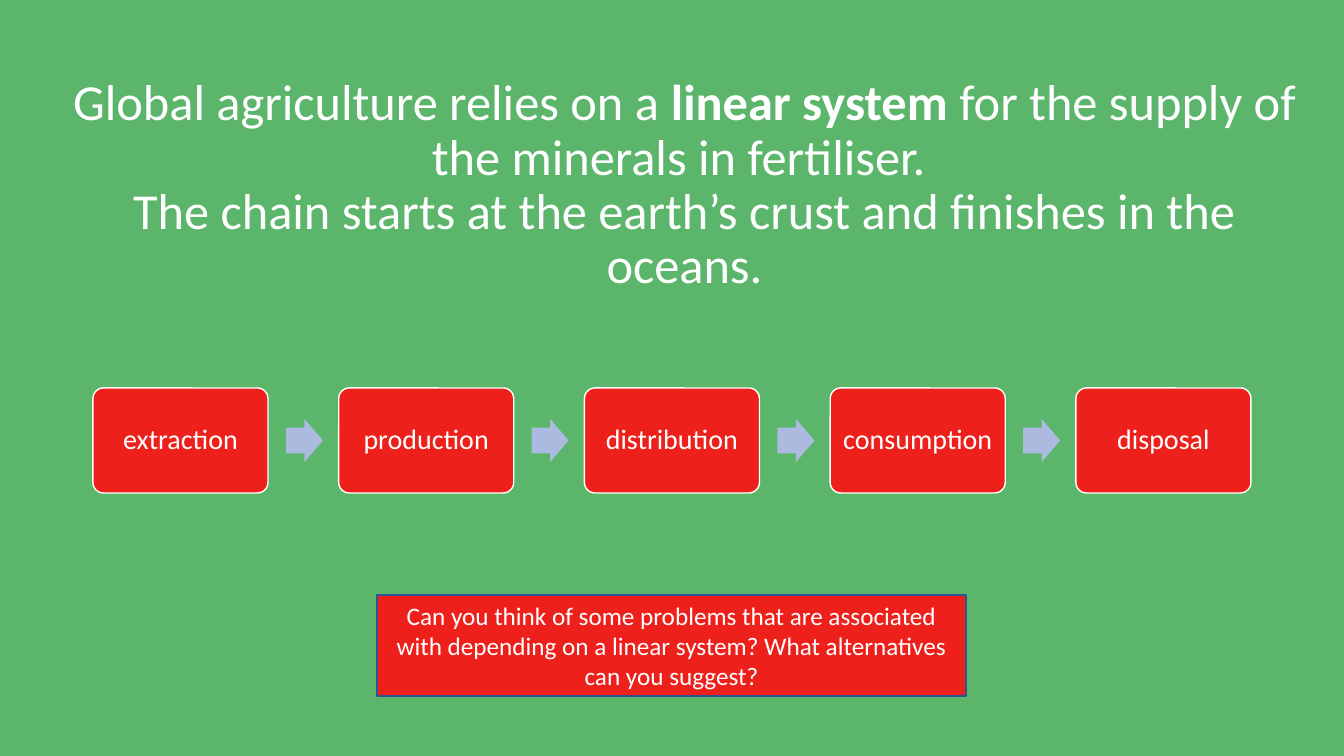
"""Build a slide on the linear supply chain of fertiliser minerals."""
from pptx import Presentation
from pptx import util as u
from pptx.dml import color
from pptx.enum import shapes, text

SCALE = 914400 / 100.8
WHITE, RED, GREEN, PALE_BLUE, NAVY = "FFFFFF", "ED201B", "5BB56A", "ABBADE", "31538F"


def px(*lengths):
    return [u.Emu(round(length * SCALE)) for length in lengths]


def add_run(paragraph, wording, size, bold=False):
    run = paragraph.add_run()
    run.text = wording
    run.font.name = "Calibri"
    run.font.size = u.Pt(size)
    run.font.bold = bold
    run.font.color.rgb = color.RGBColor.from_string(WHITE)


presentation = Presentation()
presentation.slide_width, presentation.slide_height = px(1344, 756)
slide = presentation.slides.add_slide(presentation.slide_layouts[6])
slide.background.fill.solid()
slide.background.fill.fore_color.rgb = color.RGBColor.from_string(GREEN)

title = slide.shapes.add_textbox(*px(50, 113, 1269, 146))
title.text_frame.word_wrap = True
title.text_frame.vertical_anchor = text.MSO_ANCHOR.MIDDLE
paragraph = title.text_frame.paragraphs[0]
paragraph.alignment = text.PP_ALIGN.CENTER
paragraph.line_spacing = 0.9
add_run(paragraph, "Global agriculture relies on a ", 36)
add_run(paragraph, "linear system", 36, bold=True)
add_run(paragraph, " for the supply of the minerals in fertiliser. ", 36)
paragraph.add_line_break()
add_run(paragraph, "The chain starts at the earth’s crust and finishes in the oceans.", 36)

stages = ["extraction", "production", "distribution", "consumption", "disposal"]
chain_left, chain_right, stage_width = 93, 1251, 175
pitch = (chain_right - chain_left - stage_width) / (len(stages) - 1)
SHAPE = shapes.MSO_SHAPE
parts = []
for index, stage in enumerate(stages):
    left = chain_left + index * pitch
    parts.append((SHAPE.ROUNDED_RECTANGLE, (left, 388, stage_width, 105), [0.1], RED, WHITE, stage, 20, 0.9))
    if index < len(stages) - 1:
        parts.append((SHAPE.RIGHT_ARROW, (left + 193, 419, 37, 43), [0.6, 0.5], PALE_BLUE, None, None, 0, 1))
question = (
    "Can you think of some problems that are associated with depending on a linear system? "
    "What alternatives can you suggest?"
)
parts.append((SHAPE.RECTANGLE, (377, 595, 589, 101), [], RED, NAVY, question, 18, 1))

for preset, box, adjustments, fill, line, wording, size, spacing in parts:
    shape = slide.shapes.add_shape(preset, *px(*box))
    shape.shadow.inherit = False
    for position, adjustment in enumerate(adjustments):
        shape.adjustments[position] = adjustment
    shape.fill.solid()
    shape.fill.fore_color.rgb = color.RGBColor.from_string(fill)
    if line:
        shape.line.color.rgb = color.RGBColor.from_string(line)
        shape.line.width = u.Pt(1)
    else:
        shape.line.fill.background()
    if wording:
        frame = shape.text_frame
        frame.word_wrap = True
        frame.vertical_anchor = text.MSO_ANCHOR.MIDDLE
        if preset == SHAPE.ROUNDED_RECTANGLE:
            frame.margin_left, frame.margin_right = px(7, 7)
        paragraph = frame.paragraphs[0]
        paragraph.alignment = text.PP_ALIGN.CENTER
        paragraph.line_spacing = spacing
        add_run(paragraph, wording, size)

presentation.save("out.pptx")
